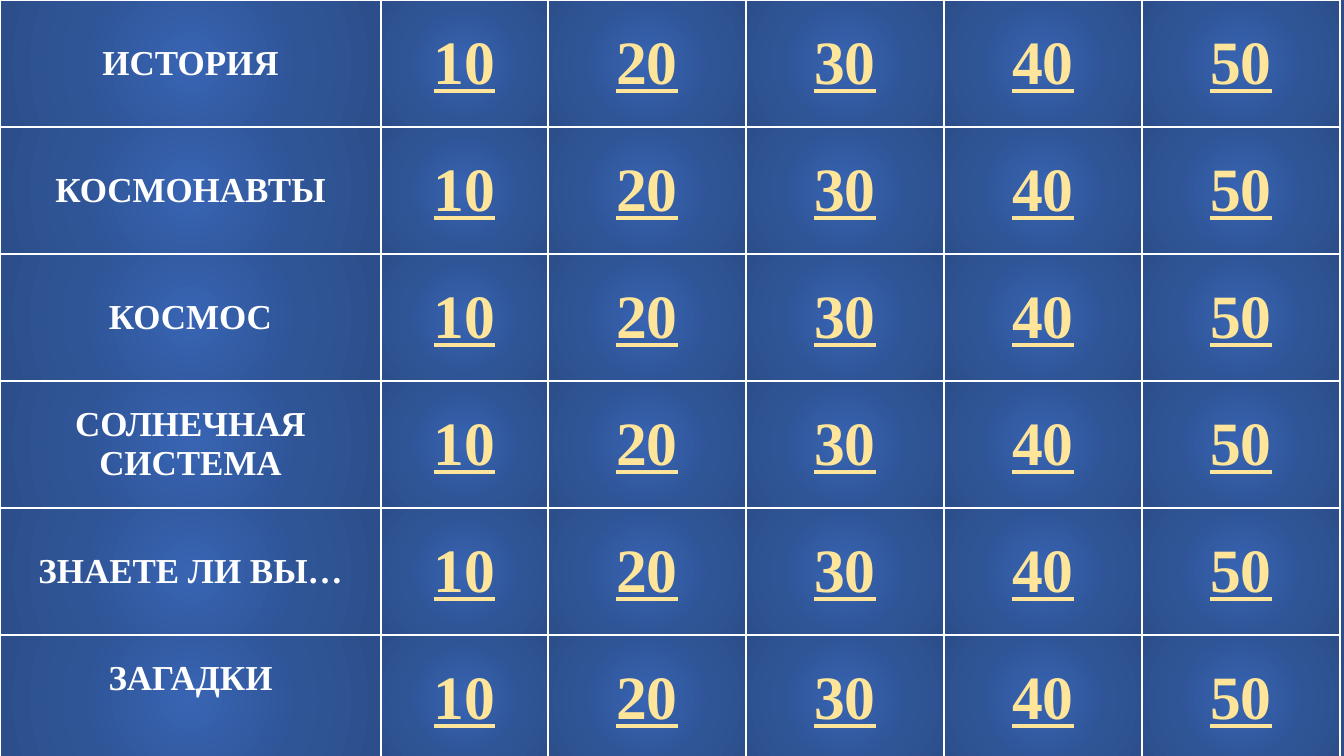
import dataclasses

import pptx
import pptx.dml.color
import pptx.enum.text
import pptx.oxml
import pptx.oxml.ns
import pptx.table
import pptx.util

RGBColor = pptx.dml.color.RGBColor
WHITE = RGBColor(0xFF, 0xFF, 0xFF)
CREAM = RGBColor(0xFE, 0xE5, 0x99)
LIGHT_BLUE = RGBColor(0x38, 0x64, 0xB3)
MID_BLUE = RGBColor(0x2F, 0x55, 0x97)
DARK_BLUE = RGBColor(0x2C, 0x4F, 0x8C)
CENTRE_BLUE = RGBColor(0x2D, 0x51, 0x90)

# Gradient stops: percent and colour
CELL_STOPS = [(0, LIGHT_BLUE), (55, MID_BLUE), (97, DARK_BLUE)]
BACK_STOPS = [(0, CENTRE_BLUE), (30, LIGHT_BLUE), (55, MID_BLUE), (97, DARK_BLUE)]

# Lengths in px
EMU_PER_PX = 914400 / 100.8
SLIDE_W, SLIDE_H = 1344, 756
ROW_H = 127
COL_WIDTHS = [381, 167] + [198] * 4
POINTS = [10, 20, 30, 40, 50]


@dataclasses.dataclass
class Category:
    name: str
    bottom: int = 5


@dataclasses.dataclass
class TextStyle:
    size: int
    color: RGBColor
    underline: bool


CATEGORIES = [
    Category("ИСТОРИЯ"),
    Category("КОСМОНАВТЫ"),
    Category("КОСМОС"),
    Category("СОЛНЕЧНАЯ СИСТЕМА"),
    Category("ЗНАЕТЕ ЛИ ВЫ…"),
    Category("ЗАГАДКИ", bottom=45),
]
NAME_STYLE = TextStyle(25, WHITE, False)
POINTS_STYLE = TextStyle(44, CREAM, True)


def px(n: int) -> pptx.util.Emu:
    return pptx.util.Emu(round(n * EMU_PER_PX))


def make_xml(body: str):
    tag = body.split()[0]
    return pptx.oxml.parse_xml(
        f'<{tag} {pptx.oxml.ns.nsdecls("a")} {body[len(tag):]}</{tag}>')


def radial_fill(stops: list[tuple[int, RGBColor]]):
    gs = "".join(f'<a:gs pos="{pos * 1000}"><a:srgbClr val="{color}"/></a:gs>'
                 for pos, color in stops)
    return make_xml(
        f'a:gradFill rotWithShape="1"><a:gsLst>{gs}</a:gsLst><a:path path="circle">'
        '<a:fillToRect l="50000" t="50000" r="50000" b="50000"/></a:path>')


def fill_cell(cell: pptx.table._Cell, text: str, style: TextStyle, bottom: int = 5) -> None:
    cell.vertical_anchor = pptx.enum.text.MSO_ANCHOR.MIDDLE
    cell.margin_bottom = px(bottom)
    p = cell.text_frame.paragraphs[0]
    p.alignment = pptx.enum.text.PP_ALIGN.CENTER
    r = p.add_run()
    r.text = text
    font = {"name": "Times New Roman", "size": pptx.util.Pt(style.size),
            "bold": True, "underline": style.underline}
    for key, value in font.items():
        setattr(r.font, key, value)
    r.font.color.rgb = style.color

    # Borders come before the fill
    tc_pr = cell._tc.get_or_add_tcPr()
    for side in "LRTB":
        tc_pr.append(make_xml(
            f'a:ln{side} w="12700"><a:solidFill><a:srgbClr val="{WHITE}"/></a:solidFill>'))
    tc_pr.append(radial_fill(CELL_STOPS))


def main() -> None:
    prs = pptx.Presentation()
    prs.slide_width, prs.slide_height = px(SLIDE_W), px(SLIDE_H)
    s = prs.slides.add_slide(prs.slide_layouts[6])

    # Background
    s.background.fill.solid()
    solid = s.element.find(".//" + pptx.oxml.ns.qn("p:bgPr"))[0]
    solid.getparent().replace(solid, radial_fill(BACK_STOPS))

    # Game board
    board = s.shapes.add_table(
        len(CATEGORIES), len(COL_WIDTHS), 0, 0,
        px(sum(COL_WIDTHS)), px(ROW_H * len(CATEGORIES))).table
    board.first_row = board.horz_banding = False
    for col, width in zip(board.columns, COL_WIDTHS):
        col.width = px(width)
    for row, category in zip(board.rows, CATEGORIES):
        row.height = px(ROW_H)
        name_cell, *point_cells = row.cells
        fill_cell(name_cell, category.name, NAME_STYLE, category.bottom)
        for cell, points in zip(point_cells, POINTS):
            fill_cell(cell, str(points), POINTS_STYLE)

    prs.save("out.pptx")


if __name__ == "__main__":
    main()
